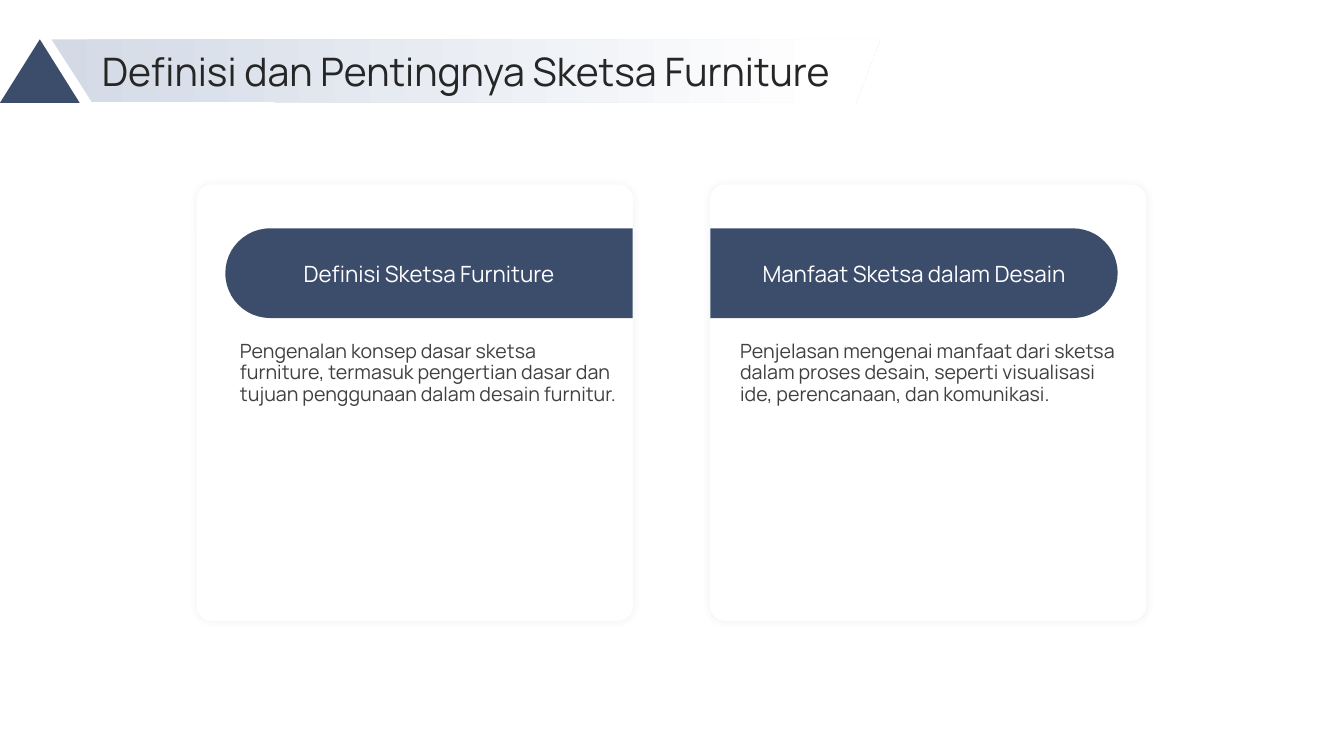
from lxml import etree
from pptx import Presentation
from pptx.dml.color import RGBColor
from pptx.enum.shapes import MSO_SHAPE
from pptx.enum.text import MSO_ANCHOR, MSO_AUTO_SIZE, PP_ALIGN
from pptx.oxml.ns import qn
from pptx.util import Inches, Pt

ROUNDED = MSO_SHAPE.ROUNDED_RECTANGLE
PILL = MSO_SHAPE.ROUND_2_SAME_RECTANGLE
TRIANGLE = MSO_SHAPE.ISOSCELES_TRIANGLE
TOP, MIDDLE = MSO_ANCHOR.TOP, MSO_ANCHOR.MIDDLE
LEFT, CENTER = PP_ALIGN.LEFT, PP_ALIGN.CENTER
NO_AUTOFIT = MSO_AUTO_SIZE.NONE

COLORS = {
    "navy": "3C4C6B",
    "white": "FFFFFF",
    "mist": "D3DAE6",
    "title": "262626",
    "body": "404040",
}
FORMATS = {
    "title": {"size": 28, "color": "title", "align": LEFT, "anchor": MIDDLE, "spacing": 1.0},
    "heading": {"size": 16, "color": "white", "align": CENTER, "anchor": MIDDLE, "spacing": 1.0},
    "body": {"size": 14, "color": "body", "align": LEFT, "anchor": TOP, "spacing": 0.9},
}
CARDS = [
    {
        "left": 1.95,
        "pill_left": 3.81,
        "rotation": 270,
        "heading": ("Definisi Sketsa Furniture", 2.6, 3.31),
        "body": ("Pengenalan konsep dasar sketsa furniture, termasuk pengertian dasar "
                 "dan tujuan penggunaan dalam desain furnitur.", 2.38),
    },
    {
        "left": 7.04,
        "pill_left": 8.62,
        "rotation": 90,
        "heading": ("Manfaat Sketsa dalam Desain", 7.44, 3.25),
        "body": ("Penjelasan mengenai manfaat dari sketsa dalam proses desain, "
                 "seperti visualisasi ide, perencanaan, dan komunikasi.", 7.34),
    },
]


def add_filled_shape(kind, box, color):
    shape = slide.shapes.add_shape(kind, *map(Inches, box))
    shape.shadow.inherit = False
    shape.fill.solid()
    shape.fill.fore_color.rgb = RGBColor.from_string(COLORS[color])
    shape.line.fill.background()
    return shape


def write_text(shape, text, box, style):
    for name, value in zip(("left", "top", "width", "height"), box):
        setattr(shape, name, Inches(value))
    look = FORMATS[style]
    frame = shape.text_frame
    frame.text = text
    frame_values = {"word_wrap": True, "auto_size": NO_AUTOFIT, "vertical_anchor": look["anchor"],
                    "margin_left": 0, "margin_top": 0, "margin_right": 0, "margin_bottom": 0}
    for name, value in frame_values.items():
        setattr(frame, name, value)
    paragraph = frame.paragraphs[0]
    paragraph.alignment = look["align"]
    paragraph.line_spacing = look["spacing"]
    font = paragraph.runs[0].font
    font.name = "Manrope"
    font.size = Pt(look["size"])
    font.color.rgb = RGBColor.from_string(COLORS[look["color"]])


presentation = Presentation()
presentation.slide_width = Inches(13.33)
presentation.slide_height = Inches(7.5)
slide = presentation.slides.add_slide(presentation.slide_layouts[5])

for card in CARDS:
    panel = add_filled_shape(ROUNDED, (card["left"], 1.83, 4.33, 4.33), "white")
    panel.adjustments[0] = 0.035
    effects = panel.element.spPr.find(qn("a:effectLst"))
    glow = etree.SubElement(effects, qn("a:outerShdw"), blurRad=str(Pt(5.6)), dist="0", dir="0",
                            algn="ctr", rotWithShape="0")
    tint = etree.SubElement(glow, qn("a:srgbClr"), val=COLORS["navy"])
    etree.SubElement(tint, qn("a:alpha"), val="8000")

    pill = add_filled_shape(PILL, (card["pill_left"], 0.69, 0.89, 4.04), "navy")
    pill.adjustments[0] = 0.5
    pill.adjustments[1] = 0
    pill.rotation = card["rotation"]

    heading, heading_left, heading_width = card["heading"]
    body, body_left = card["body"]
    for text, box, style in (
        (heading, (heading_left, 2.3, heading_width, 0.82), "heading"),
        (body, (body_left, 3.39, 3.74, 2.2), "body"),
    ):
        text_box = slide.shapes.add_textbox(*map(Inches, box))
        write_text(text_box, text, box, style)

add_filled_shape(TRIANGLE, (0, 0.39, 0.79, 0.63), "navy")

builder = slide.shapes.build_freeform(Inches(0.91), Inches(1.01))
builder.add_line_segments(
    [(Inches(x), Inches(y)) for x, y in ((0.51, 0.39), (8.73, 0.39), (8.49, 1.02))], close=True)
banner = builder.convert_to_shape()
banner.shadow.inherit = False
banner.line.fill.background()
banner.fill.gradient()
banner.fill.gradient_angle = 0
for stop, position, color in zip(banner.fill.gradient_stops, (0, 0.94), ("mist", "white")):
    stop.position = position
    stop.color.rgb = RGBColor.from_string(COLORS[color])

title = slide.shapes.title
write_text(title, "Definisi dan Pentingnya Sketsa Furniture", (1.01, 0.45, 11.52, 0.51), "title")
title.element.getparent().append(title.element)

presentation.save("out.pptx")
